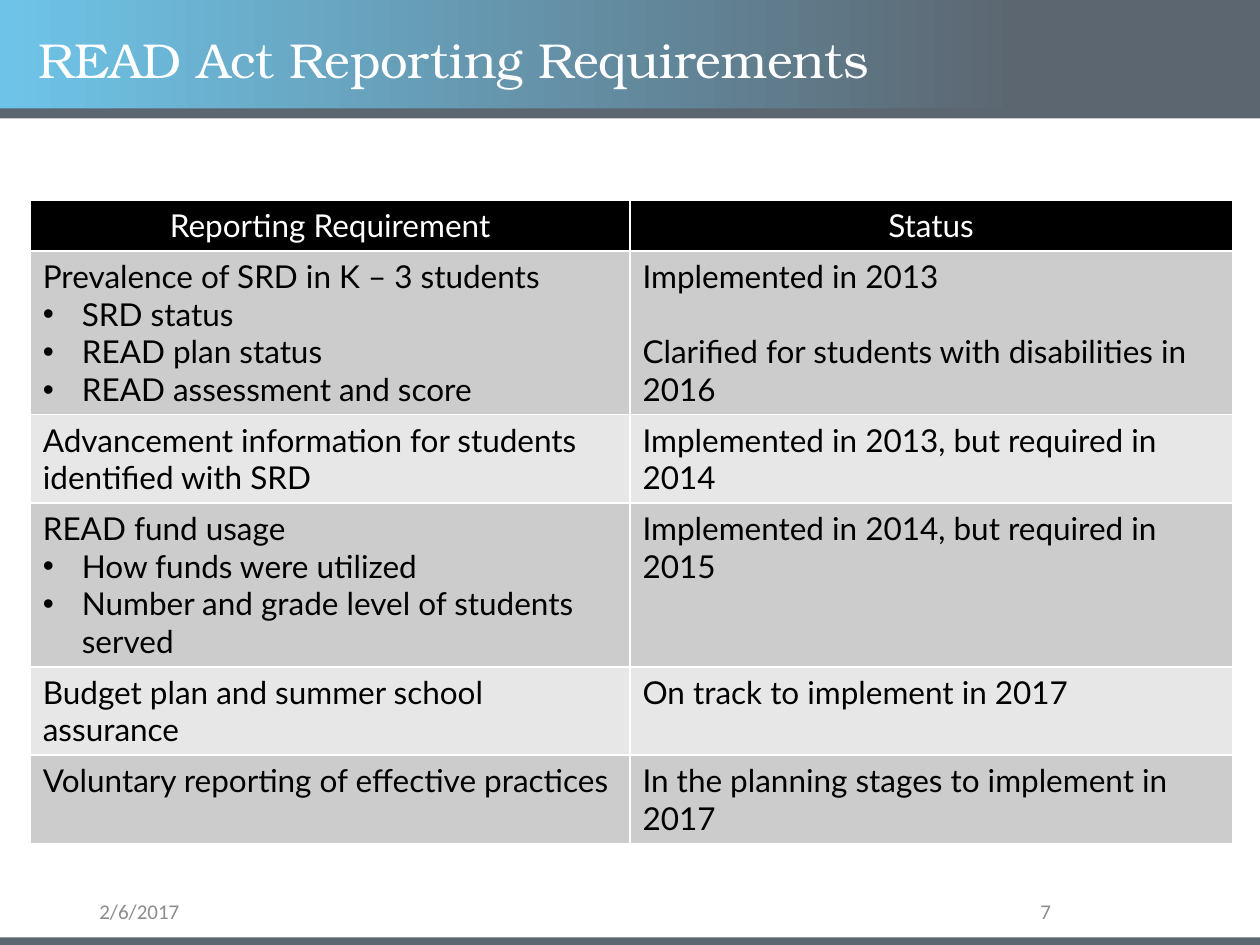
"""Build the READ Act reporting requirements slide."""
from lxml import etree
from pptx import Presentation, util as u
from pptx.dml.color import RGBColor
from pptx.enum import shapes, text
from pptx.oxml import ns

WHITE = RGBColor(0xFF, 0xFF, 0xFF)
BLACK = RGBColor(0, 0, 0)
SKY = RGBColor(0x6E, 0xC4, 0xE8)
SLATE = RGBColor(0x5C, 0x66, 0x70)
GREY = RGBColor(0x8C, 0x8C, 0x8C)
DARK = RGBColor(0xCC, 0xCC, 0xCC)
LIGHT = RGBColor(0xE7, 0xE7, 0xE7)
DOT = "• "
LEFT, MID, RIGHT = text.PP_ALIGN.LEFT, text.PP_ALIGN.CENTER, text.PP_ALIGN.RIGHT

deck = Presentation()
deck.slide_width, deck.slide_height = u.Inches(10), u.Inches(7.5)
slide = deck.slides.add_slide(deck.slide_layouts[6])


def place(left, top, wide, high):
    """Turn percentages of the slide into lengths."""
    col, row = deck.slide_width / 100, deck.slide_height / 100
    return [int(n) for n in (left * col, top * row, wide * col, high * row)]


def write(frame, lines, size=18, font="Lato", color=BLACK, align=LEFT, gap=0, lead=None):
    """Fill a text frame, making bullets of lines that start with a dot."""
    frame.word_wrap = True
    for i, line in enumerate(lines):
        para = frame.add_paragraph() if i else frame.paragraphs[0]
        para.alignment = align
        if lead:
            para.line_spacing = lead
        if i and gap:
            para.space_before = u.Pt(gap)
        if line.startswith(DOT):
            prop = para._p.get_or_add_pPr()
            prop.set("marL", str(u.Inches(0.31)))
            prop.set("indent", str(-u.Inches(0.31)))
            etree.SubElement(prop, ns.qn("a:buFont"), typeface="Arial")
            etree.SubElement(prop, ns.qn("a:buChar"), char="•")
        run = para.add_run()
        run.text = line.removeprefix(DOT)
        run.font.size, run.font.name, run.font.bold = u.Pt(size), font, False
        run.font.color.rgb = color


bands = [(0, 11.6), (11.47, 1.07), (99.2, 0.8)]
for top, high in bands:
    band = slide.shapes.add_shape(shapes.MSO_SHAPE.RECTANGLE, *place(0, top, 100, high))
    band.shadow.inherit = False
    band.line.fill.background()
    if top:
        band.fill.solid()
        band.fill.fore_color.rgb = SLATE
    else:
        band.fill.gradient()
        band.fill.gradient_angle = 0
        for stop, spot, color in zip(band.fill.gradient_stops, (0, 0.81), (SKY, SLATE)):
            stop.position, stop.color.rgb = spot, color

small = {"size": 12, "font": "Calibri", "color": GREY}
head = {"size": 28, "font": "TeX Gyre Bonum", "color": WHITE, "lead": 0.9}
labels = [
    ("READ Act Reporting Requirements", (2.1, 2.8, 86.2, 7.6), head),
    ("2/6/2017", (6.9, 94.93, 22.5, 3.07), small),
    ("7", (70.6, 94.93, 13.8, 3.07), {**small, "align": RIGHT}),
]
for line, spot, look in labels:
    box = slide.shapes.add_textbox(*place(*spot))
    box.text_frame.vertical_anchor = text.MSO_ANCHOR.MIDDLE
    write(box.text_frame, [line], **look)

rows = [
    (1, ["Reporting Requirement"], ["Status"]),
    (4, ["Prevalence of SRD in K – 3 students", "• SRD status",
         "• READ plan status", "• READ assessment and score"],
     ["Implemented in 2013", "Clarified for students with disabilities in 2016"]),
    (2, ["Advancement information for students identified with SRD"],
     ["Implemented in 2013, but required in 2014"]),
    (4, ["READ fund usage", "• How funds were utilized",
         "• Number and grade level of students served"],
     ["Implemented in 2014, but required in 2015"]),
    (2, ["Budget plan and summer school assurance"], ["On track to implement in 2017"]),
    (2, ["Voluntary reporting of effective practices"],
     ["In the planning stages to implement in 2017"]),
]
highs = [1.33 + 4 * row[0] for row in rows]
grid = slide.shapes.add_table(len(rows), 2, *place(2.4, 21.2, 95.4, sum(highs))).table
for col, wide in zip(grid.columns, (47.6, 47.8)):
    col.width = place(0, 0, wide, 0)[2]
for r, (count, *cells) in enumerate(rows):
    grid.rows[r].height = place(0, 0, 0, highs[r])[3]
    for c, lines in enumerate(cells):
        cell = grid.cell(r, c)
        cell.fill.solid()
        cell.fill.fore_color.rgb = (DARK if r % 2 else LIGHT) if r else BLACK
        look = {"gap": 21.6 * c} if r else {"color": WHITE, "align": MID}
        write(cell.text_frame, lines, **look)
        prop = cell._tc.get_or_add_tcPr()
        for i, side in enumerate("LRTB"):
            edge = etree.Element(ns.qn("a:ln" + side), w=str(u.Pt(1)))
            fill = etree.SubElement(edge, ns.qn("a:solidFill"))
            etree.SubElement(fill, ns.qn("a:srgbClr"), val=str(WHITE))
            prop.insert(i, edge)

deck.save("out.pptx")
